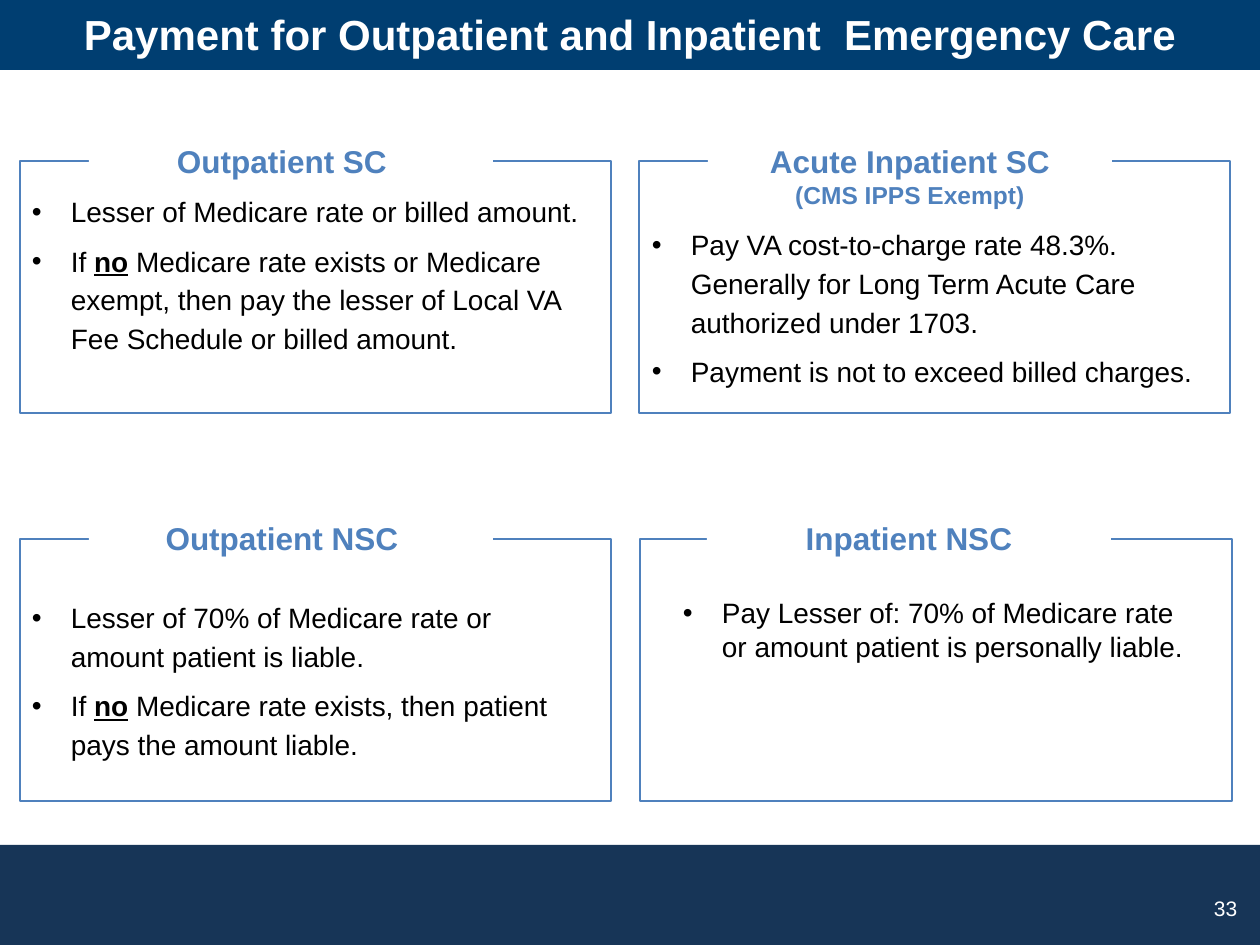
from typing import Any, NamedTuple

import lxml.etree
import pptx
import pptx.dml.color
import pptx.enum.shapes
import pptx.enum.text
import pptx.oxml.ns
import pptx.util

EMU_PER_PX = 914400 / 126
FONT = "Arial"
NAVY = pptx.dml.color.RGBColor(0x17, 0x35, 0x57)
BLUE = pptx.dml.color.RGBColor(0x00, 0x3E, 0x71)
ACCENT = pptx.dml.color.RGBColor(0x4F, 0x81, 0xBD)
WHITE = pptx.dml.color.RGBColor(0xFF, 0xFF, 0xFF)
BLACK = pptx.dml.color.RGBColor(0x00, 0x00, 0x00)
RECTANGLE = pptx.enum.shapes.MSO_SHAPE.RECTANGLE
CENTER = pptx.enum.text.PP_ALIGN.CENTER
MIDDLE = pptx.enum.text.MSO_ANCHOR.MIDDLE
TOP = pptx.enum.text.MSO_ANCHOR.TOP
INSET_X, INSET_Y = 13, 6
BULLET_INDENT = 39


class Box(NamedTuple):
    left: int
    top: int
    width: int
    height: int


class Run(NamedTuple):
    text: str
    stressed: bool = False


class Heading(NamedTuple):
    text: str
    size: int


class Panel(NamedTuple):
    frame: Box
    heading_box: Box
    headings: list[Heading]
    heading_shift: int
    body: Box
    bullets: list[list[Run]]
    line_spacing: float = 1.15


PANELS = [
    Panel(
        Box(20, 161, 591, 252), Box(89, 136, 404, 50),
        [Heading("Outpatient SC", 18)], 18,
        Box(19, 184, 582, 179),
        [
            [Run("Lesser of Medicare rate or billed amount.")],
            [Run("If "), Run("no", True),
             Run(" Medicare rate exists or Medicare exempt, then pay the lesser "
                 "of Local VA Fee Schedule or billed amount.")],
        ],
    ),
    Panel(
        Box(20, 539, 591, 262), Box(89, 513, 404, 76),
        [Heading("Outpatient NSC", 18)], 18,
        Box(19, 590, 582, 229),
        [
            [Run("Lesser of 70% of Medicare rate or amount patient is liable.")],
            [Run("If "), Run("no", True),
             Run(" Medicare rate exists, then patient pays the amount liable.")],
        ],
    ),
    Panel(
        Box(639, 161, 591, 252), Box(708, 136, 404, 81),
        [Heading("Acute Inpatient SC", 18), Heading("(CMS IPPS Exempt)", 14)], 0,
        Box(639, 217, 582, 268),
        [
            [Run("Pay VA cost-to-charge rate 48.3%. Generally for Long Term "
                 "Acute Care authorized under 1703.")],
            [Run("Payment is not to exceed billed charges.")],
        ],
    ),
    Panel(
        Box(640, 539, 592, 262), Box(707, 513, 404, 81),
        [Heading("Inpatient NSC", 18)], 0,
        Box(670, 590, 536, 130),
        [[Run("Pay Lesser of: 70% of Medicare rate or amount patient is "
              "personally liable.")]],
        1.0,
    ),
]


def px(length: int) -> pptx.util.Emu:
    return pptx.util.Emu(round(length * EMU_PER_PX))


def apply(target: Any, values: dict[str, Any]) -> None:
    for name, value in values.items():
        setattr(target, name, value)


def add_rectangle(shapes: Any, box: Box, fill: Any = None, line: Any = None) -> Any:
    rectangle = shapes.add_shape(RECTANGLE, *map(px, box))
    rectangle.shadow.inherit = False
    if fill is None:
        rectangle.fill.background()
    else:
        rectangle.fill.solid()
        rectangle.fill.fore_color.rgb = fill
    if line is None:
        rectangle.line.fill.background()
    else:
        rectangle.line.color.rgb = line
        rectangle.line.width = pptx.util.Pt(1.5)
    return rectangle


def set_frame(frame: Any, inset_x: int, inset_y: int, shift: int = 0,
              anchor: Any = TOP) -> None:
    apply(frame, {
        "word_wrap": True,
        "vertical_anchor": anchor,
        "margin_left": px(inset_x),
        "margin_right": px(inset_x + shift),
        "margin_top": px(inset_y),
        "margin_bottom": px(inset_y),
    })


def add_run(paragraph: Any, text: str, size: int, color: Any,
            bold: bool = False, underline: bool = False) -> None:
    run = paragraph.add_run()
    run.text = text
    apply(run.font, {
        "name": FONT,
        "size": pptx.util.Pt(size),
        "bold": bold,
        "underline": underline,
    })
    run.font.color.rgb = color


def next_paragraph(frame: Any, index: int) -> Any:
    return frame.add_paragraph() if index else frame.paragraphs[0]


def add_label(shapes: Any, box: Box, text: str, size: int, **style: Any) -> None:
    frame = shapes.add_textbox(*map(px, box)).text_frame
    set_frame(frame, 0, 0, anchor=style.get("anchor", TOP))
    frame.paragraphs[0].alignment = style.get("alignment")
    add_run(frame.paragraphs[0], text, size, WHITE, style.get("bold", False))


def add_bullet(paragraph: Any) -> None:
    properties = paragraph._p.get_or_add_pPr()
    properties.set("marL", str(px(BULLET_INDENT)))
    properties.set("indent", str(-px(BULLET_INDENT)))
    font = lxml.etree.SubElement(properties, pptx.oxml.ns.qn("a:buFont"))
    font.set("typeface", FONT)
    bullet = lxml.etree.SubElement(properties, pptx.oxml.ns.qn("a:buChar"))
    bullet.set("char", "•")


def draw_panel(slide: Any, panel: Panel) -> None:
    shapes = slide.shapes.add_group_shape().shapes
    add_rectangle(shapes, panel.frame, line=ACCENT)

    heading_frame = add_rectangle(shapes, panel.heading_box, WHITE).text_frame
    set_frame(heading_frame, INSET_X, INSET_Y, panel.heading_shift)
    for index, heading in enumerate(panel.headings):
        paragraph = next_paragraph(heading_frame, index)
        paragraph.alignment = CENTER
        add_run(paragraph, heading.text, heading.size, ACCENT, bold=True)

    body_frame = shapes.add_textbox(*map(px, panel.body)).text_frame
    set_frame(body_frame, INSET_X, INSET_Y)
    for index, runs in enumerate(panel.bullets):
        paragraph = next_paragraph(body_frame, index)
        add_bullet(paragraph)
        apply(paragraph, {
            "line_spacing": panel.line_spacing,
            "space_after": pptx.util.Pt(6),
        })
        for run in runs:
            add_run(paragraph, run.text, 16, BLACK, run.stressed, run.stressed)


def main() -> None:
    presentation = pptx.Presentation()
    apply(presentation, {"slide_width": px(1260), "slide_height": px(945)})
    slide = presentation.slides.add_slide(presentation.slide_layouts[6])

    add_rectangle(slide.shapes, Box(0, 845, 1260, 100), NAVY)
    add_rectangle(slide.shapes, Box(0, 0, 1260, 70), BLUE)
    add_label(slide.shapes, Box(32, 9, 1196, 50),
              "Payment for Outpatient and Inpatient  Emergency Care", 24,
              bold=True, alignment=CENTER, anchor=MIDDLE)
    add_label(slide.shapes, Box(1214, 896, 38, 38), "33", 12)
    for panel in PANELS:
        draw_panel(slide, panel)

    presentation.save("out.pptx")


if __name__ == "__main__":
    main()
